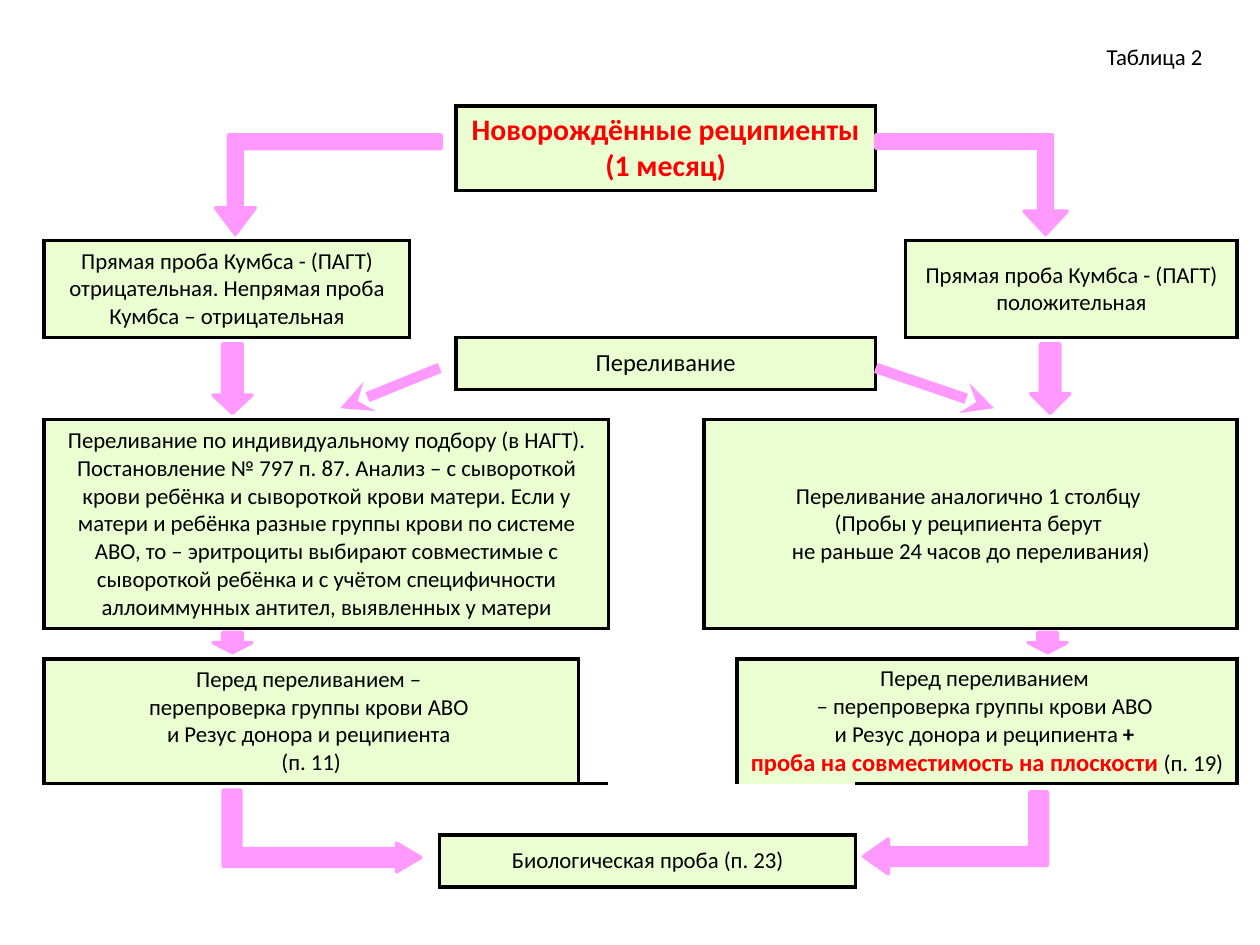
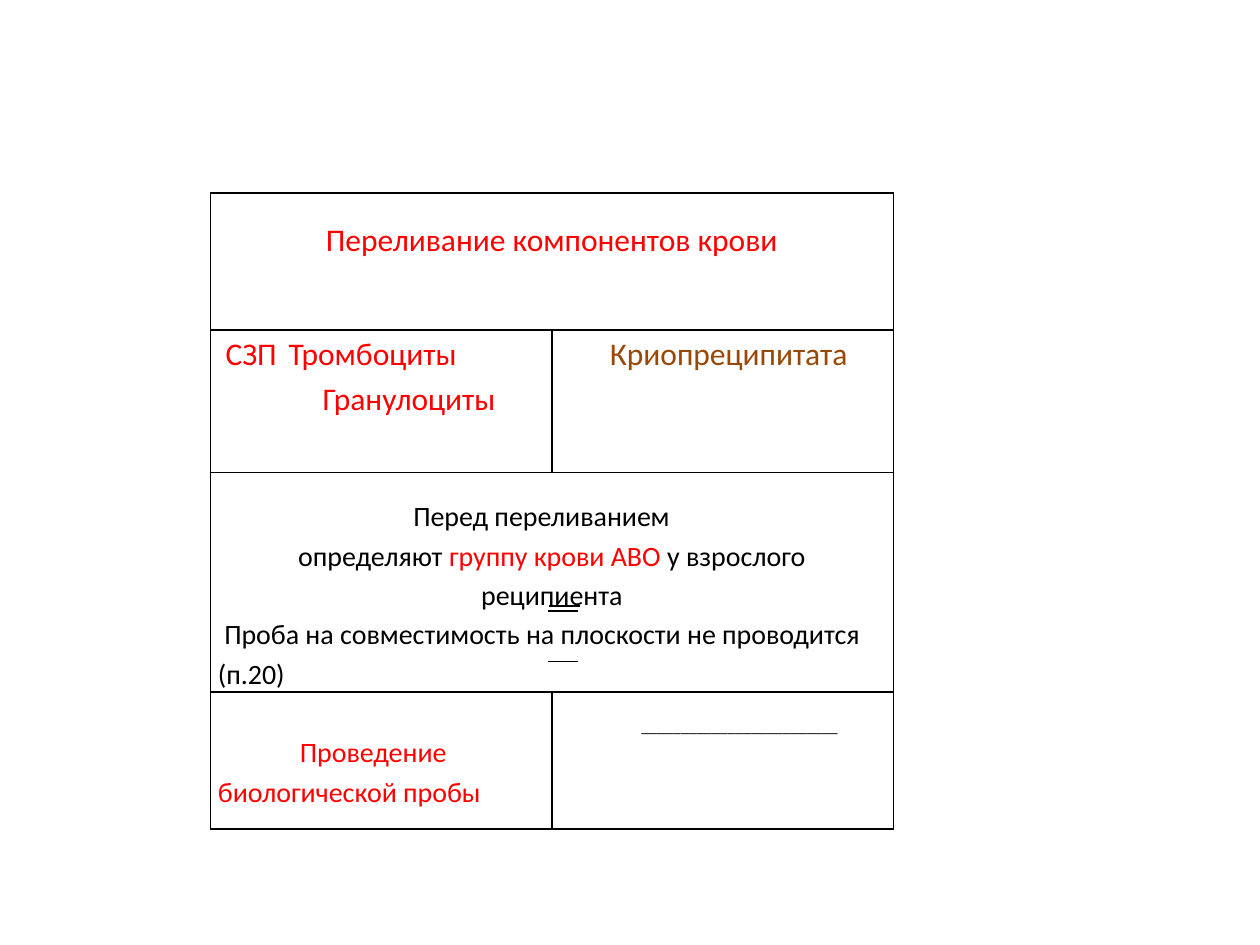
from lxml import etree
from pptx import Presentation
from pptx import util as u
from pptx.dml.color import RGBColor
from pptx.enum import shapes, text
from pptx.oxml.ns import qn

PX = 9144  # 100 px to the inch
FONT = "Calibri"
BLACK = RGBColor(0, 0, 0)
WHITE = RGBColor(255, 255, 255)
RED = RGBColor(255, 0, 0)
BROWN = RGBColor(0x98, 0x48, 0x07)
GREEN = RGBColor(0xEB, 0xFE, 0xD2)
PINK = RGBColor(0xFF, 0x99, 0xFF)
MID = "mid"
ALL = "lrtb"


def run(words, size=13, color=BLACK, bold=False):
    return words, size, color, bold


def lines(*rows, **look):
    """Centred paragraphs that share one look."""
    return [(MID, run(row, **look)) for row in rows]


# Slide 1: a cell is (columns spanned, sides drawn, paragraphs if it is a box)
CAPTION = [("right", run("Таблица 2"))]
HEAD = lines("Новорождённые реципиенты ", "(1 месяц)", size=17, color=RED, bold=True)
MINUS = lines("Прямая проба Кумбса - (ПАГТ) отрицательная. "
              "Непрямая проба Кумбса – отрицательная")
PLUS = lines("Прямая проба Кумбса - (ПАГТ) положительная")
GIVE = lines("Переливание", size=14)
PICK = lines(
    "Переливание по индивидуальному подбору (в НАГТ). Постановление № 797 п. 87. "
    "Анализ – с сывороткой крови ребёнка и сывороткой крови матери. Если у матери и "
    "ребёнка разные группы крови по системе АВО, то – эритроциты выбирают совместимые "
    "с сывороткой ребёнка и с учётом специфичности аллоиммунных антител, "
    "выявленных у матери")
SAME = lines("Переливание аналогично 1 столбцу ", "(Пробы у реципиента берут ",
             "не раньше 24 часов до переливания)")
CHECK = lines("Перед переливанием – ", "перепроверка группы крови АВО ",
              "и Резус донора и реципиента ", "(п. 11)")
CROSS = lines("Перед переливанием ", "– перепроверка группы крови АВО ") + [
    (MID, run("и Резус донора и реципиента "), run("+ ", bold=True)),
    (MID, run("проба на совместимость на плоскости", 14, RED, True),
     run(" ", bold=True), run("(п. 19) "))]
FINAL = lines("Биологическая проба (п. 23)")

FLOW_COLS = (290, 17, 13, 97, 24, 76, 26, 94, 16, 23, 263)
FLOW = [
    (67, [(1, ""), (2, "r"), (6, ALL, HEAD), (1, "l"), (1, "")]),
    (40, [(1, "b"), (2, ""), (6, "t"), (1, ""), (1, "b")]),
    (77, [(1, ALL, MINUS), (2, "l"), (6, "b"), (1, "r"), (1, ALL, PLUS)]),
    (41, [(1, "t"), (2, "r"), (6, ALL, GIVE), (1, "l"), (1, "t")]),
    (24, [(1, "b"), (2, "b"), (6, "tb"), (1, "b"), (1, "b")]),
    (166, [(5, ALL, PICK), (1, "lr"), (5, ALL, SAME)]),
    (24, [(5, "tb"), (1, ""), (5, "tb")]),
    (99, [(4, ALL, CHECK), (1, "l"), (1, ""), (1, "r"), (4, ALL, CROSS)]),
    (41, [(2, "t"), (3, "tb"), (1, "b"), (2, "b"), (3, "t")]),
    (41, [(2, "r"), (6, ALL, FINAL), (3, "l")]),
]

BENT = shapes.MSO_SHAPE.BENT_UP_ARROW
DOWN = shapes.MSO_SHAPE.DOWN_ARROW
ARROWS = [  # kind, box, turn, flip, adjustments
    (BENT, (171, 107, 179, 79), 180, None, (0.138, 0.2, 0.267)),
    (BENT, (695, 107, 152, 79), 180, "flipH", (0.134, 0.217, 0.233)),
    (DOWN, (169, 273, 31, 55), 0, None, (0.5, 0.466)),
    (DOWN, (818, 273, 31, 55), 0, None, ()),
    (DOWN, (169, 502, 31, 16), 0, None, ()),
    (DOWN, (816, 502, 31, 16), 0, None, ()),
    (BENT, (223, 581, 65, 157), 90, None, (0.217, 0.176, 0.3)),
    (BENT, (726, 588, 65, 146), 90, "flipV", (0.217, 0.213, 0.3)),
]
LINKS = [(349, 292, 270, 324), (695, 292, 789, 324)]

# Slide 2: a cell is (columns spanned, top inset, paragraphs);
# a paragraph starts with MID or its left indent
PARTS = [
    (109, [(2, 18, lines("Переливание компонентов крови", size=18, color=RED))]),
    (113, [(1, 0, [(6, run("СЗП\tТромбоциты", 18, RED)),
                   (83, run("Гранулоциты", 18, RED))]),
           (1, 0, [(40, run("Криопреципитата", 18, BROWN))])]),
    (174, [(2, 18, [
        (155, run("Перед переливанием", 16)),
        (MID, run("определяют ", 16), run("группу крови АВО ", 16, RED),
         run("у взрослого", 16)),
        (MID, run("реципиента", 16)),
        (5, run("Проба на совместимость на плоскости не проводится", 16)),
        (0, run("(п.20)", 16))])]),
    (109, [(1, 31, [(65, run("Проведение", 16, RED)),
                    (0, run("биологической пробы", 16, RED))]),
           (1, 18, [(65, run("_" * 25, 9))])]),
]
TAB = 108
DASHES = [((436, 481, 23, 40), "t"), ((435, 485, 23, 40), "tb")]


def emu(*px):
    return [u.Emu(n * PX) for n in px]


def dress(font, size, color, bold):
    font.name, font.size, font.bold = FONT, u.Pt(size), bold
    font.color.rgb = color


def write(frame, paras, gap=None):
    for i, (place, *runs) in enumerate(paras):
        par = frame.paragraphs[0] if i == 0 else frame.add_paragraph()
        if gap:
            par.line_spacing = gap
        dress(par.font, *runs[0][1:])
        for words, *look in runs:
            piece = par.add_run()
            piece.text = words
            dress(piece.font, *look)
        if place == MID:
            par.alignment = text.PP_ALIGN.CENTER
        elif place == "right":
            par.alignment = text.PP_ALIGN.RIGHT
        else:
            props = par._p.get_or_add_pPr()
            props.set("marL", str(place * PX))
            props.set("indent", "0")
            if "\t" in runs[0][0]:
                tabs = etree.Element(qn("a:tabLst"))
                etree.SubElement(tabs, qn("a:tab"), pos=str(TAB * PX), algn="l")
                props.find(qn("a:defRPr")).addprevious(tabs)


def rim(cell, sides, wide):
    """Draw the named sides of a cell and clear the others."""
    props = cell._tc.get_or_add_tcPr()
    for side in ALL:
        line = etree.SubElement(props, qn("a:ln" + side.upper()),
                                w=str(u.Pt(wide)))
        if side in sides:
            fill = etree.SubElement(line, qn("a:solidFill"))
            etree.SubElement(fill, qn("a:srgbClr"), val=str(BLACK))
        else:
            etree.SubElement(line, qn("a:noFill"))


def blank(cell):
    """Keep an empty cell from pushing its row taller."""
    cell.margin_top = cell.margin_bottom = 0
    par = cell.text_frame.paragraphs[0]
    etree.SubElement(par._p, qn("a:endParaRPr"), sz="600")


def grid(slide, left, top, cols, rows):
    box = emu(left, top, sum(cols), sum(rows))
    table = slide.shapes.add_table(len(rows), len(cols), *box).table
    table.first_row = table.horz_banding = False
    for col, wide in zip(table.columns, cols):
        col.width = u.Emu(wide * PX)
    for row, high in zip(table.rows, rows):
        row.height = u.Emu(high * PX)
    return table


def span(table, row, col, count, sides, wide, fill):
    """Merge, outline and fill a stretch of cells; give back the first."""
    cells = [table.cell(row, col + i) for i in range(count)]
    if count > 1:
        cells[0].merge(cells[-1])
    for i, cell in enumerate(cells):
        inner = ("l" if i else "") + ("r" if i < count - 1 else "")
        # the first cell speaks for the whole stretch
        rim(cell, sides if i == 0 else set(sides) - set(inner), wide)
        if fill is None:
            cell.fill.background()
        else:
            cell.fill.solid()
            cell.fill.fore_color.rgb = fill
        if i:
            blank(cell)
    return cells[0]


def flow(slide):
    note = slide.shapes.add_textbox(*emu(51, 29, 913, 32)).text_frame
    note.word_wrap = True
    write(note, CAPTION)

    table = grid(slide, 35, 84, FLOW_COLS, [high for high, _ in FLOW])
    for r, (_, cells) in enumerate(FLOW):
        col = 0
        for count, sides, *paras in cells:
            cell = span(table, r, col, count, sides, 2.25, GREEN if paras else WHITE)
            if paras:
                cell.vertical_anchor = text.MSO_ANCHOR.MIDDLE
                write(cell.text_frame, paras[0])
            else:
                blank(cell)
            col += count

    for kind, box, turn, flip, adjust in ARROWS:
        arrow = slide.shapes.add_shape(kind, *emu(*box))
        arrow.shadow.inherit = False
        arrow.rotation = turn
        if flip:
            arrow._element.spPr.xfrm.set(flip, "1")
        for i, part in enumerate(adjust):
            arrow.adjustments[i] = part
        arrow.fill.solid()
        arrow.fill.fore_color.rgb = arrow.line.color.rgb = PINK
        arrow.line.width = u.Pt(2)

    for ends in LINKS:
        link = slide.shapes.add_connector(shapes.MSO_CONNECTOR.STRAIGHT, *emu(*ends))
        link.line.color.rgb = PINK
        link.line.width = u.Pt(6)
        props = link._element.spPr
        etree.SubElement(props.find(qn("a:ln")), qn("a:tailEnd"), type="stealth")
        etree.SubElement(props, qn("a:effectLst"))


def parts(slide):
    table = grid(slide, 167, 153, (271, 271), [high for high, _ in PARTS])
    for r, (_, cells) in enumerate(PARTS):
        for c, (count, inset, paras) in enumerate(cells):
            cell = span(table, r, c, count, ALL, 1, None)
            cell.margin_left = cell.margin_right = u.Emu(6 * PX)
            cell.margin_top, cell.margin_bottom = emu(inset, 0)
            write(cell.text_frame, paras, 1.15)
    for (left, top, wide, high), sides in DASHES:
        dash = grid(slide, left, top, [wide], [high])
        blank(span(dash, 0, 0, 1, sides, 1, None))


def main():
    deck = Presentation()
    deck.slide_width, deck.slide_height = emu(1000, 750)
    for draw in (flow, parts):
        draw(deck.slides.add_slide(deck.slide_layouts[6]))
    deck.save("out.pptx")


if __name__ == "__main__":
    main()
